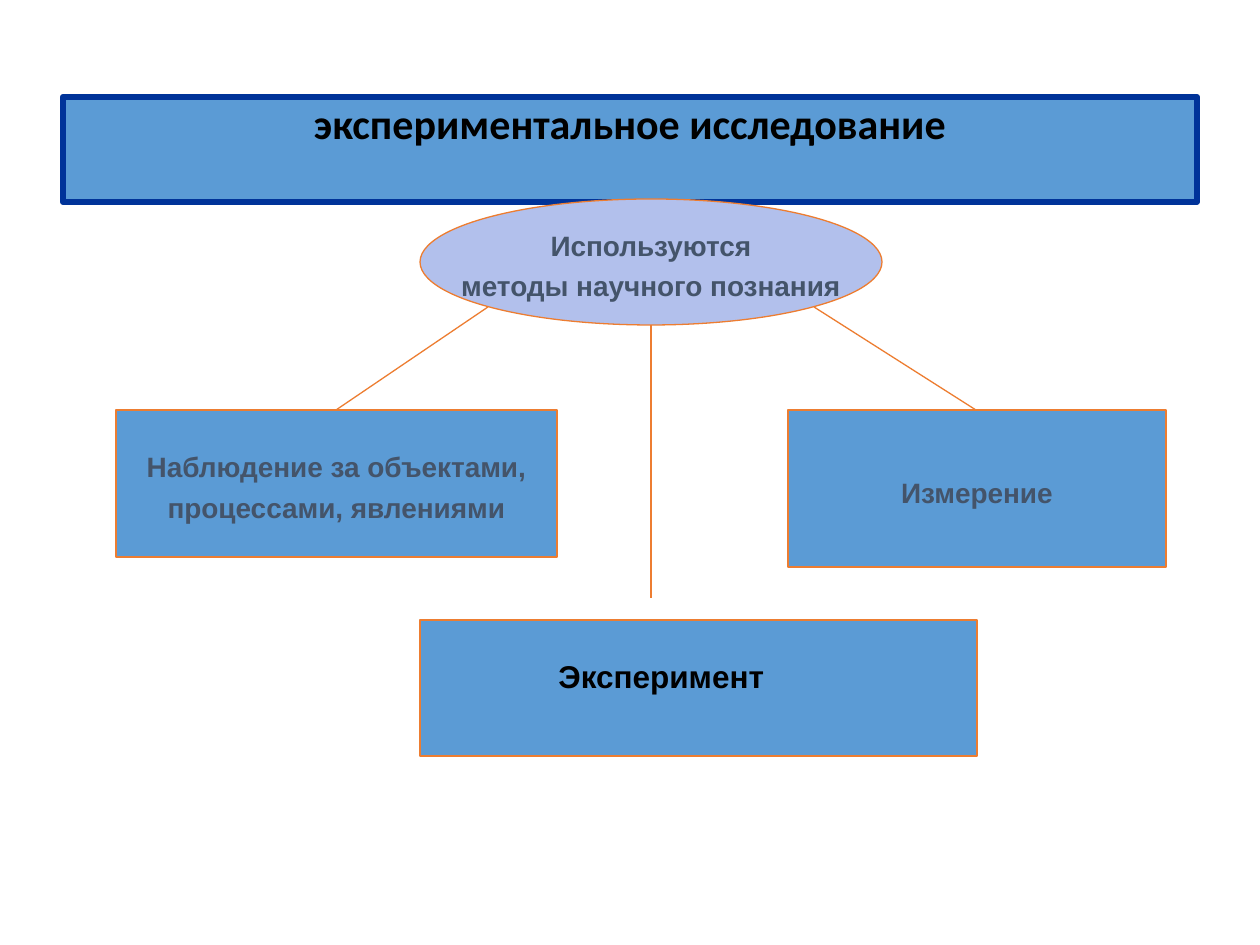
from pptx import Presentation
from pptx.dml.color import RGBColor
from pptx.enum.shapes import MSO_CONNECTOR, MSO_SHAPE
from pptx.enum.text import MSO_ANCHOR, PP_ALIGN
from pptx.oxml.ns import qn
from pptx.util import Pt
from lxml.etree import SubElement

HEX = {"blue": "5B9BD5", "navy": "003399", "lilac": "B2C0EC",
       "edge": "ED7D31", "slate": "44546A", "black": "000000"}
HEAD = {"name": "Calibri", "size": Pt(24), "bold": True}
BODY = {"name": "Arial", "size": Pt(16), "bold": True}
LARGE = {**BODY, "size": Pt(18)}


def emu(px):
    return round(px * 914400 / 126)


class Board:
    def __init__(self):
        self.deck = Presentation()
        self.deck.slide_width, self.deck.slide_height = emu(1260), emu(945)
        self.slide = self.deck.slides.add_slide(self.deck.slide_layouts[6])

    def edge(self, line, ink, width):
        line.color.rgb = RGBColor.from_string(HEX[ink])
        line.width = Pt(width)

    def fill_text(self, shape, lines, font=BODY, ink="slate", align=PP_ALIGN.CENTER,
                  space=1.2, anchor=MSO_ANCHOR.MIDDLE, wrap=False):
        frame = shape.text_frame
        frame.word_wrap = wrap
        frame.vertical_anchor = anchor
        frame.text = "\n".join(lines)
        for para in frame.paragraphs:
            para.alignment = align
            para.line_spacing = space
            for key, value in font.items():
                setattr(para.font, key, value)
            para.font.color.rgb = RGBColor.from_string(HEX[ink])

    def block(self, box, kind=MSO_SHAPE.RECTANGLE, fill="blue", ink="edge", width=0.75):
        shape = self.slide.shapes.add_shape(kind, *map(emu, box))
        shape.shadow.inherit = False
        shape.fill.solid()
        shape.fill.fore_color.rgb = RGBColor.from_string(HEX[fill])
        self.edge(shape.line, ink, width)
        return shape

    def link(self, *ends):
        line = self.slide.shapes.add_connector(MSO_CONNECTOR.STRAIGHT, *map(emu, ends))
        self.edge(line.line, "edge", 0.75)
        SubElement(line._element.spPr, qn("a:effectLst"))

    def label(self, box, lines, **style):
        self.fill_text(self.slide.shapes.add_textbox(*map(emu, box)), lines, **style)


def main():
    board = Board()
    title = board.block((63, 97, 1134, 105), ink="navy", width=3.5)
    board.fill_text(title, ["экспериментальное исследование"], font=HEAD, ink="black",
                    space=0.9, anchor=MSO_ANCHOR.TOP, wrap=True)

    hub = board.block((420, 199, 462, 126), MSO_SHAPE.OVAL, "lilac")
    board.fill_text(hub, ["Используются", "методы научного познания"])

    watch = board.block((116, 410, 441, 147))
    board.fill_text(watch, ["Наблюдение за объектами,", "процессами, явлениями"])
    gauge = board.block((788, 410, 378, 157))
    board.fill_text(gauge, ["Измерение"])

    for ends in ((488, 307, 336, 410), (814, 307, 976, 410), (651, 598, 651, 325)):
        board.link(*ends)

    board.block((420, 620, 557, 136))
    board.label((546, 651, 232, 50), ["Эксперимент"], font=LARGE, ink="black",
                align=PP_ALIGN.LEFT, space=1.0, anchor=MSO_ANCHOR.TOP)
    board.deck.save("out.pptx")


if __name__ == "__main__":
    main()
